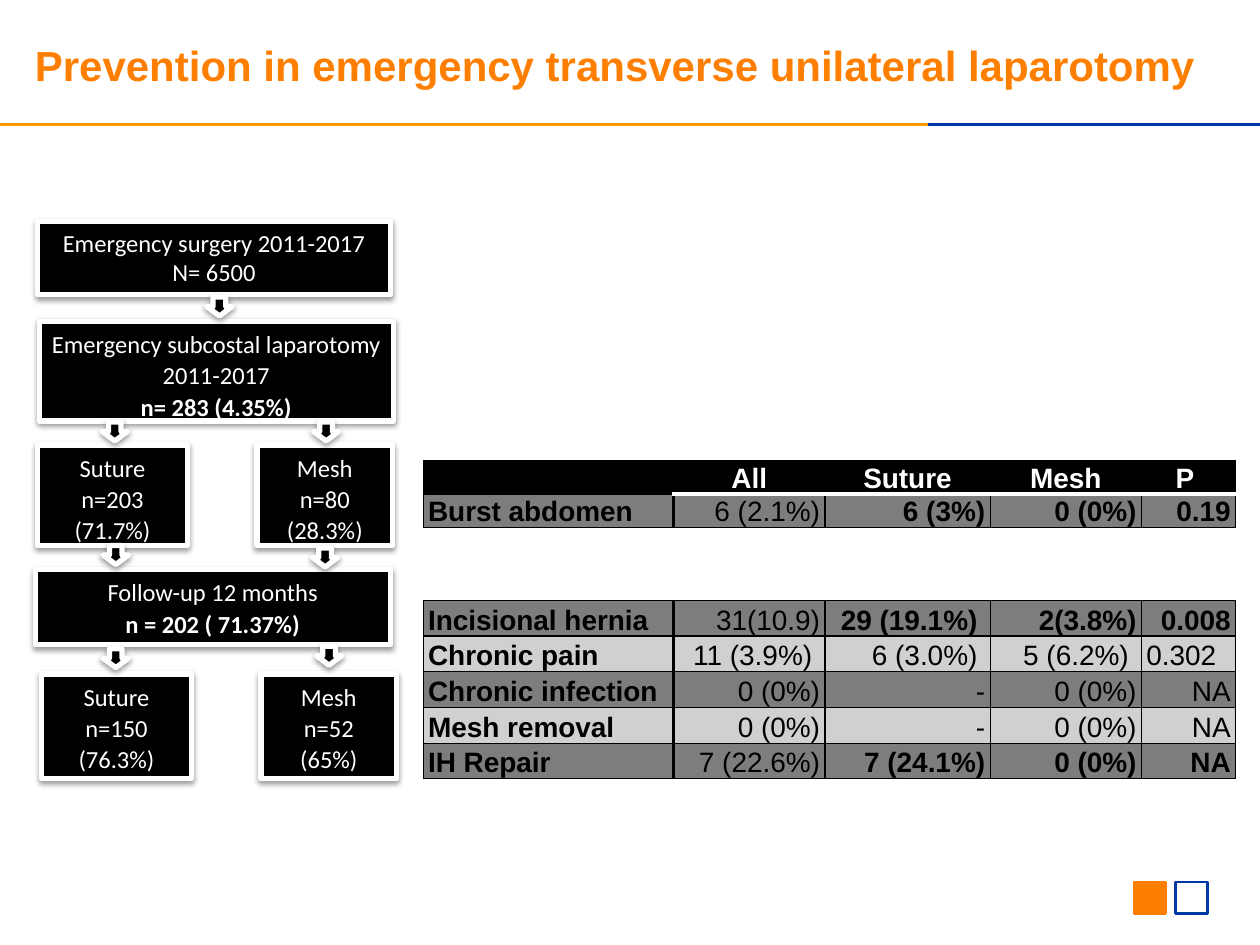
from dataclasses import dataclass

from lxml import etree
from pptx import Presentation
from pptx.dml.color import RGBColor
from pptx.enum.shapes import MSO_CONNECTOR, MSO_SHAPE
from pptx.enum.text import MSO_ANCHOR, PP_ALIGN
from pptx.oxml.ns import qn
from pptx.util import Cm, Pt

RECT, DOWN = MSO_SHAPE.RECTANGLE, MSO_SHAPE.DOWN_ARROW
LINE = MSO_CONNECTOR.STRAIGHT
LEFT, MID, RIGHT = PP_ALIGN.LEFT, PP_ALIGN.CENTER, PP_ALIGN.RIGHT
TOP, CENTRE, LOW = MSO_ANCHOR.TOP, MSO_ANCHOR.MIDDLE, MSO_ANCHOR.BOTTOM

HUES = {
    "black": "000000", "white": "FFFFFF", "orange": "FE7F00", "amber": "FF9900",
    "blue": "0039A6", "dark": "7D7D7D", "light": "D0D0D0",
}
BODY = {"alignment": MID, "space_before": Pt(14), "space_after": Pt(8)}
BOX_FONT = {"name": "Calibri", "size": Pt(14)}
CELL_FONT = {"name": "Arial", "size": Pt(16)}
HEAD_FONT = {"name": "Arial", "size": Pt(24), "bold": True}
CELL = {"margin_left": Cm(0.1), "margin_right": Cm(0.1), "margin_top": 0,
        "margin_bottom": 0, "vertical_anchor": LOW}
WIDTHS = (5.05, 3.05, 3.33, 3.05, 1.9)


@dataclass
class Box:
    x: float
    y: float
    w: float
    h: float
    lines: tuple
    strong: bool = False
    space: float = 1.06


@dataclass
class Row:
    cells: tuple
    fill: str = "light"
    strong: bool = False


BOXES = (
    Box(0.76, 4.47, 7.11, 1.47, ("Emergency surgery 2011-2017", "N= 6500"), space=1.0),
    Box(0.79, 6.48, 7.14, 2.01,
        ("Emergency subcostal laparotomy 2011-2017", "n= 283 (4.35%)"), True),
    Box(0.71, 11.48, 7.16, 1.52, ("Follow-up 12 months", "n = 202 ( 71.37%)"), True),
    Box(0.76, 8.97, 3.02, 2.03, ("Suture", "n=203 (71.7%)")),
    Box(5.18, 8.97, 2.74, 2.03, ("Mesh", "n=80 (28.3%)")),
    Box(0.84, 13.59, 3.02, 2.11, ("Suture", "n=150 (76.3%)")),
    Box(5.26, 13.59, 2.74, 2.11, ("Mesh", "n=52 (65%)")),
)
ARROWS = ((4.17, 5.99), (6.32, 8.51), (2.06, 8.51), (2.08, 11.0),
          (6.3, 11.05), (2.08, 13.08), (6.38, 13.03))
BURST = (
    Row(("", "All", "Suture", "Mesh", "P "), "black", True),
    Row(("Burst abdomen", "6 (2.1%)", "6 (3%)", "0 (0%)", "0.19"), "dark", True),
)
LATE = (
    Row(("Incisional hernia", "31(10.9)", "29 (19.1%) ", "2(3.8%)", "0.008"), "dark", True),
    Row(("Chronic pain", "11 (3.9%) ", "6 (3.0%) ", "5 (6.2%) ", "0.302")),
    Row(("Chronic infection", "0 (0%)", "-", "0 (0%)", "NA"), "dark"),
    Row(("Mesh removal", "0 (0%)", "-", "0 (0%)", "NA")),
    Row(("IH Repair", "7 (22.6%)", "7 (24.1%)", "0 (0%)", "NA"), "dark", True),
)


def apply(item, style: dict) -> None:
    for key, value in style.items():
        setattr(item, key, value)


def tint(name: str) -> RGBColor:
    return RGBColor.from_string(HUES[name])


def paint(fill, name: str) -> None:
    fill.solid()
    fill.fore_color.rgb = tint(name)


def write(para, text: str, style: dict, hue: str) -> None:
    run = para.add_run()
    run.text = text
    apply(run.font, style)
    run.font.color.rgb = tint(hue)


def draw_shape(slide, kind, x: float, y: float, w: float, h: float,
               fill: str, edge: str, weight: float):
    shape = slide.shapes.add_shape(kind, Cm(x), Cm(y), Cm(w), Cm(h))
    shape.shadow.inherit = False
    if fill:
        paint(shape.fill, fill)
    else:
        shape.fill.background()
    shape.line.color.rgb = tint(edge)
    shape.line.width = Pt(weight)
    return shape


def add_shade(shape) -> None:
    effects = shape._element.spPr.find(qn("a:effectLst"))
    shade = etree.SubElement(effects, qn("a:outerShdw"), blurRad="40000",
                             dist="20000", dir="5400000", rotWithShape="0")
    hue = etree.SubElement(shade, qn("a:srgbClr"), val=HUES["black"])
    etree.SubElement(hue, qn("a:alpha"), val="38000")


def draw_box(slide, box: Box) -> None:
    shape = draw_shape(slide, RECT, box.x, box.y, box.w, box.h, "black", "white", 3)
    add_shade(shape)
    apply(shape.text_frame, {"word_wrap": True, "vertical_anchor": TOP})
    para = shape.text_frame.paragraphs[0]
    apply(para, BODY | {"line_spacing": box.space})
    first, last = box.lines
    write(para, first, BOX_FONT, "white")
    para.add_line_break()
    write(para, last, BOX_FONT | {"bold": box.strong}, "white")


def draw_rule(slide, start: float, end: float, hue: str, weight: float) -> None:
    rule = slide.shapes.add_connector(LINE, Cm(start), Cm(2.51), Cm(end), Cm(2.51))
    rule.line.color.rgb = tint(hue)
    rule.line.width = Pt(weight)
    etree.SubElement(rule._element.spPr, qn("a:effectLst"))


def add_edge(cell, side: str, hue: str, weight: float) -> None:
    edge = etree.SubElement(cell._tc.get_or_add_tcPr(), qn(f"a:ln{side}"),
                            w=str(Pt(weight)))
    fill = etree.SubElement(edge, qn("a:solidFill"))
    etree.SubElement(fill, qn("a:srgbClr"), val=HUES[hue])


def draw_table(slide, rows: tuple, top: float, height: float, space: float):
    frame = slide.shapes.add_table(len(rows), len(WIDTHS), Cm(8.53), Cm(top),
                                   Cm(sum(WIDTHS)), Cm(height * len(rows)))
    table = frame.table
    for col, width in zip(table.columns, WIDTHS):
        col.width = Cm(width)
    for i, row in enumerate(rows):
        table.rows[i].height = Cm(height)
        head = row.fill == "black"
        under = i > 0 and rows[i - 1].fill == "black"
        for j, text in enumerate(row.cells):
            cell = table.cell(i, j)
            apply(cell, CELL)
            white = {"T": under and j > 0, "B": head and j > 0}
            thick = {"L": j == 1, "R": j == 0} | white
            for side in "LRTB":
                add_edge(cell, side, "white" if white.get(side) else "black",
                         2 if thick[side] else 0.75)
            paint(cell.fill, row.fill)
            para = cell.text_frame.paragraphs[0]
            align = MID if head else RIGHT if j else LEFT
            apply(para, {"alignment": align, "line_spacing": space})
            bold = head or j == 0 or row.strong and j > 1
            if text:
                write(para, text, CELL_FONT | {"bold": bold},
                      "white" if head else "black")
            else:
                etree.SubElement(para._p, qn("a:endParaRPr"), sz="1600")
    return table


def draw_title(slide) -> None:
    box = slide.shapes.add_textbox(Cm(0.41), 0, Cm(24.21), Cm(2.59))
    apply(box.text_frame, {"word_wrap": True, "vertical_anchor": CENTRE})
    para = box.text_frame.paragraphs[0]
    para.alignment = MID
    write(para, "Prevention in emergency transverse unilateral laparotomy ",
          HEAD_FONT, "orange")


def main() -> None:
    deck = Presentation()
    apply(deck, {"slide_width": Cm(25.4), "slide_height": Cm(19.05)})
    slide = deck.slides.add_slide(deck.slide_layouts[6])
    draw_rule(slide, 0, 18.7, "amber", 2.25)
    draw_rule(slide, 18.7, 25.4, "blue", 2)
    draw_shape(slide, RECT, 22.86, 17.78, 0.64, 0.64, "orange", "orange", 1.5)
    draw_shape(slide, RECT, 23.7, 17.78, 0.64, 0.64, "", "blue", 1.5)
    for box in BOXES:
        draw_box(slide, box)
    for x, y in ARROWS:
        add_shade(draw_shape(slide, DOWN, x, y, 0.51, 0.38, "black", "white", 3))
    late = draw_table(slide, LATE, 12.1, 0.72, 1.06)
    late.cell(1, 4).text_frame.paragraphs[0].alignment = LEFT
    draw_title(slide)
    draw_table(slide, BURST, 9.28, 0.67, 1.0)
    deck.save("out.pptx")


if __name__ == "__main__":
    main()
